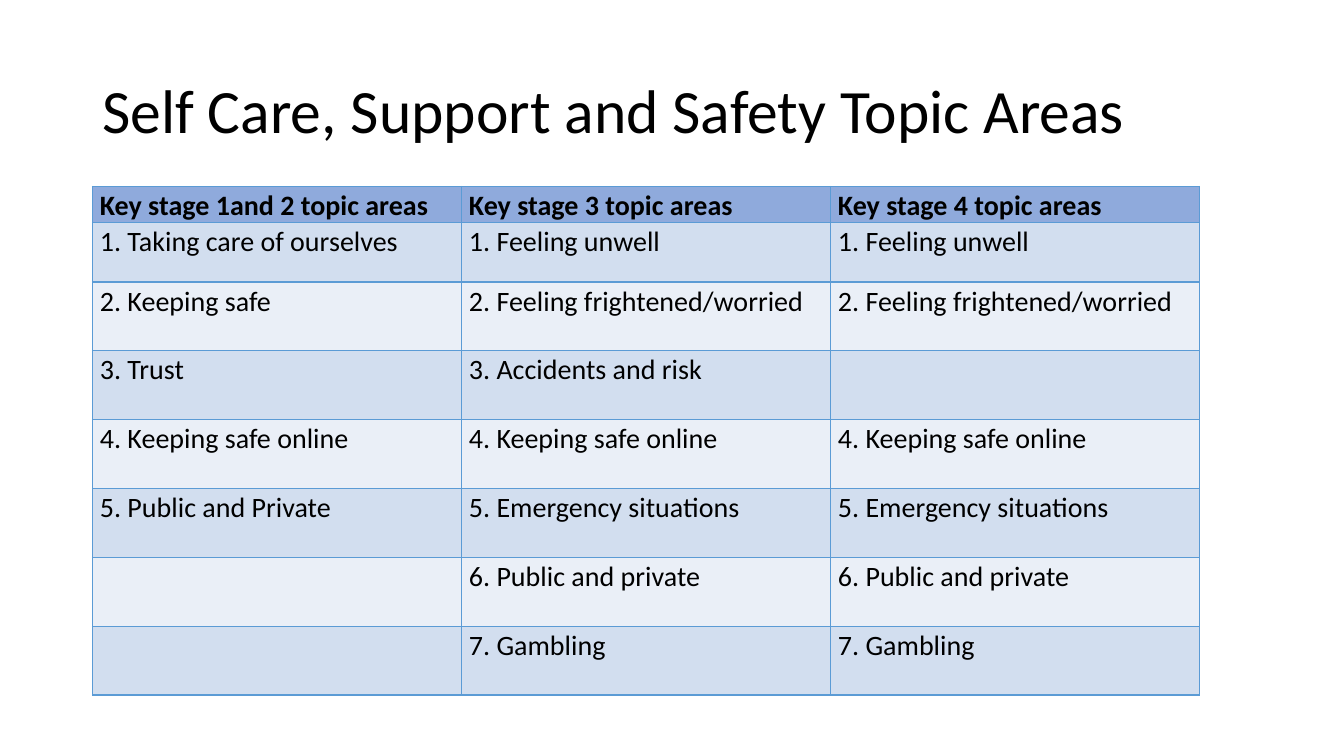
from lxml import etree
from pptx import Presentation
from pptx.dml.color import RGBColor
from pptx.enum.text import MSO_ANCHOR
from pptx.oxml.ns import qn
from pptx.util import Pt

MIDDLE = MSO_ANCHOR.MIDDLE
FONT = "Calibri"
BLACK, BORDER, HEADER = "000000", "5B9BD5", "8FAADC"
BANDS = ("D2DEEF", "EAEFF7")

TITLE = "Self Care, Support and Safety Topic Areas"
TOPICS = [
    ("Key stage 1and 2 topic areas", "Key stage 3 topic areas", "Key stage 4 topic areas"),
    ("1. Taking care of ourselves", "1. Feeling unwell", "1. Feeling unwell"),
    ("2. Keeping safe", "2. Feeling frightened/worried", "2. Feeling frightened/worried"),
    ("3. Trust", "3. Accidents and risk", ""),
    ("4. Keeping safe online", "4. Keeping safe online", "4. Keeping safe online"),
    ("5. Public and Private", "5. Emergency situations", "5. Emergency situations"),
    ("", "6. Public and private", "6. Public and private"),
    ("", "7. Gambling", "7. Gambling"),
]
LEFT, TABLE_TOP = 66, 133.2
COLUMN_WIDTH = 263.6
ROW_HEIGHTS = [22.3, 42.5] + [49.2] * 6


def color(value):
    return RGBColor.from_string(value)


def write(frame, text, size, spacing, bold=False):
    frame.text = text
    para = frame.paragraphs[0]
    para.line_spacing = spacing
    for span in para.runs:
        span.font.name = FONT
        span.font.size = Pt(size)
        span.font.bold = bold
        span.font.color.rgb = color(BLACK)


def add_borders(cell):
    properties = cell._tc.get_or_add_tcPr()
    for position, side in enumerate(("lnL", "lnR", "lnT", "lnB")):
        line = etree.Element(qn(f"a:{side}"), w=str(Pt(1)))
        fill = etree.SubElement(line, qn("a:solidFill"))
        etree.SubElement(fill, qn("a:srgbClr"), val=BORDER)
        properties.insert(position, line)


def add_title(page):
    box = page.shapes.add_textbox(Pt(LEFT), Pt(28.8), Pt(828), Pt(104.4))
    frame = box.text_frame
    frame.word_wrap = True
    frame.vertical_anchor = MIDDLE
    write(frame, TITLE, 44, 0.9)


def add_topic_table(page):
    column_count = len(TOPICS[0])
    table = page.shapes.add_table(
        len(TOPICS), column_count, Pt(LEFT), Pt(TABLE_TOP),
        Pt(COLUMN_WIDTH * column_count), Pt(sum(ROW_HEIGHTS))).table
    for column in table.columns:
        column.width = Pt(COLUMN_WIDTH)
    for index, topics in enumerate(TOPICS):
        table.rows[index].height = Pt(ROW_HEIGHTS[index])
        is_header = index == 0
        for cell, topic in zip(table.rows[index].cells, topics):
            cell.margin_left = cell.margin_right = Pt(5.4)
            cell.margin_top = cell.margin_bottom = 0
            cell.fill.solid()
            cell.fill.fore_color.rgb = color(HEADER if is_header else BANDS[(index - 1) % 2])
            write(cell.text_frame, topic, 20, 1.07, is_header)
            add_borders(cell)


def main():
    deck = Presentation()
    deck.slide_width, deck.slide_height = Pt(960), Pt(540)
    page = deck.slides.add_slide(deck.slide_layouts[6])
    add_title(page)
    add_topic_table(page)
    deck.save("out.pptx")


if __name__ == "__main__":
    main()
